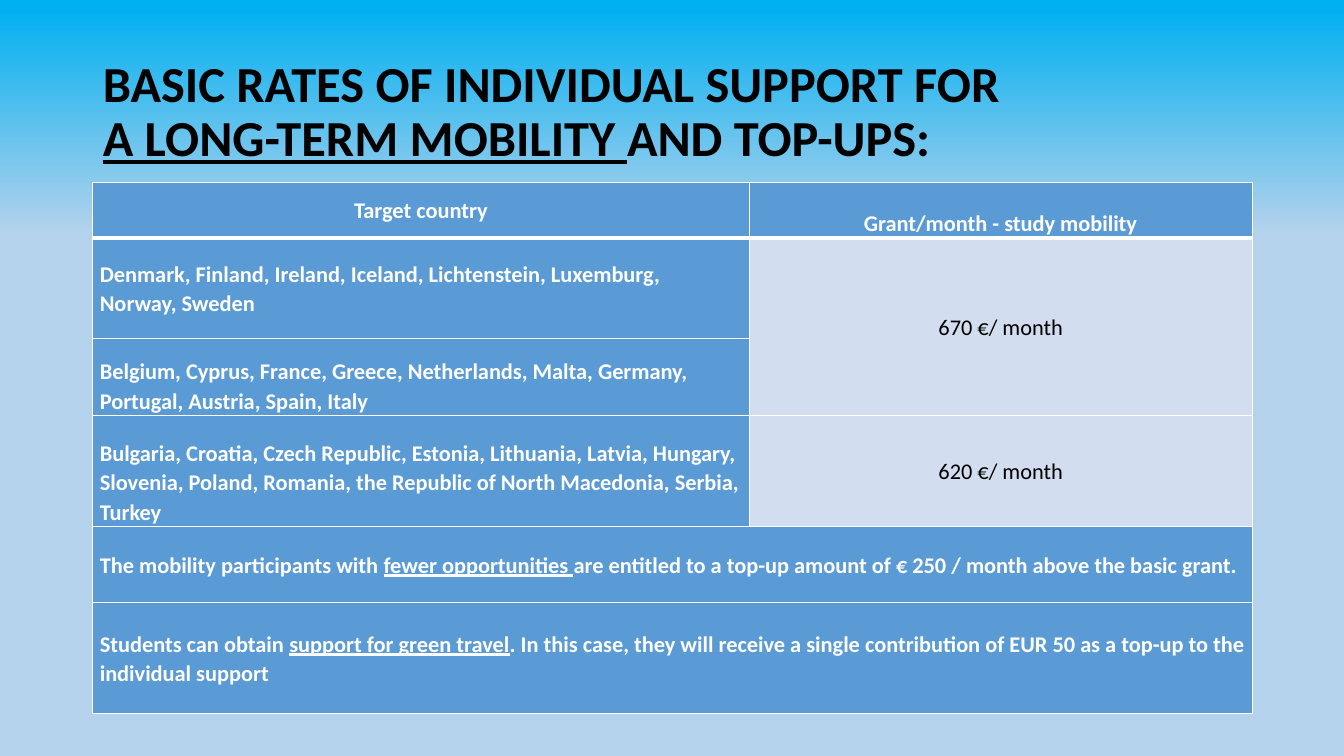
from dataclasses import dataclass

from lxml.etree import SubElement
from pptx import Presentation
from pptx.dml.color import RGBColor
from pptx.enum.text import MSO_ANCHOR, MSO_AUTO_SIZE, PP_ALIGN
from pptx.oxml.ns import qn
from pptx.slide import Slide
from pptx.table import Table, _Cell
from pptx.text.text import _Paragraph
from pptx.util import Inches, Pt

FONT = "Calibri"
SKY = RGBColor(0x00, 0xB0, 0xF0)
PALE_SKY = RGBColor(0xB5, 0xD2, 0xEC)
BLUE = RGBColor(0x5B, 0x9B, 0xD5)
PALE_BLUE = RGBColor(0xD2, 0xDE, 0xEF)
WHITE = RGBColor(0xFF, 0xFF, 0xFF)
BLACK = RGBColor(0x00, 0x00, 0x00)

COLUMN_WIDTHS = (6.51, 4.99)
ROW_HEIGHTS = (0.55, 1, 0.76, 1.1, 0.76, 1.1)


@dataclass(frozen=True)
class Text:
    words: str
    underlined: bool = False


@dataclass(frozen=True)
class Entry:
    row: int
    column: int
    texts: tuple[Text, ...]
    alignment: PP_ALIGN = PP_ALIGN.LEFT
    anchor: MSO_ANCHOR = MSO_ANCHOR.MIDDLE
    is_rate: bool = False
    last_row: int | None = None
    last_column: int | None = None


ENTRIES = (
    Entry(0, 0, (Text("Target country"),), PP_ALIGN.CENTER),
    Entry(0, 1, (Text("Grant/month - study mobility"),), PP_ALIGN.CENTER, MSO_ANCHOR.BOTTOM),
    Entry(1, 0, (Text("Denmark, Finland, Ireland, Iceland, Lichtenstein, Luxemburg, Norway, Sweden"),)),
    Entry(1, 1, (Text("670 €/ month"),), PP_ALIGN.CENTER, is_rate=True, last_row=2),
    Entry(2, 0, (Text("Belgium, Cyprus, France, Greece, Netherlands, Malta, Germany, "
                      "Portugal, Austria, Spain, Italy"),), anchor=MSO_ANCHOR.BOTTOM),
    Entry(3, 0, (Text("Bulgaria, Croatia, Czech Republic, Estonia, Lithuania, Latvia, Hungary, "
                      "Slovenia, Poland, Romania, the Republic of North Macedonia, Serbia, "
                      "Turkey"),), anchor=MSO_ANCHOR.BOTTOM),
    Entry(3, 1, (Text("620 €/ month"),), PP_ALIGN.CENTER, is_rate=True),
    Entry(4, 0, (Text("The mobility participants with "),
                 Text("fewer opportunities ", True),
                 Text("are entitled to a top-up amount of € 250 / month above the basic grant.")),
          PP_ALIGN.JUSTIFY, last_column=1),
    Entry(5, 0, (Text("Students can obtain "),
                 Text("support for green travel", True),
                 Text(". In this case, they will receive a single contribution of EUR 50 "
                      "as a top-up to the individual support")),
          PP_ALIGN.JUSTIFY, last_column=1),
)


def add_texts(paragraph: _Paragraph, texts: tuple[Text, ...]) -> None:
    for text in texts:
        run = paragraph.add_run()
        run.text = text.words
        if text.underlined:
            run.font.underline = True


def format_paragraph(paragraph: _Paragraph, size: int, color: RGBColor, bold: bool,
                     alignment: PP_ALIGN, line_spacing: float) -> None:
    paragraph.alignment = alignment
    paragraph.line_spacing = line_spacing
    paragraph.font.name = FONT
    paragraph.font.size = Pt(size)
    paragraph.font.bold = bold
    paragraph.font.color.rgb = color


def paint_background(slide: Slide) -> None:
    fill = slide.background.fill
    fill.gradient()
    fill.gradient_angle = 270
    for stop, position, color in zip(fill.gradient_stops, (0.01, 0.31), (SKY, PALE_SKY)):
        stop.position = position
        stop.color.rgb = color


def add_title(slide: Slide) -> None:
    title = slide.shapes.title
    title.left, title.top = Inches(0.92), Inches(0.4)
    title.width, title.height = Inches(11.5), Inches(1.45)
    frame = title.text_frame
    frame.auto_size = MSO_AUTO_SIZE.NONE
    frame.vertical_anchor = MSO_ANCHOR.MIDDLE
    paragraph = frame.paragraphs[0]
    add_texts(paragraph, (Text("BASIC RATES OF INDIVIDUAL SUPPORT FOR "),))
    paragraph.add_line_break()
    add_texts(paragraph, (Text("A LONG-TERM MOBILITY ", True), Text("AND TOP-UPS:")))
    format_paragraph(paragraph, 36, BLACK, True, PP_ALIGN.LEFT, 0.9)


def draw_borders(cell: _Cell, widths: dict[str, int]) -> None:
    properties = cell._tc.get_or_add_tcPr()
    for position, (side, width) in enumerate(widths.items()):
        line = SubElement(properties, qn(f"a:{side}"), w=str(Pt(width)))
        color = SubElement(SubElement(line, qn("a:solidFill")), qn("a:srgbClr"))
        color.set("val", str(WHITE))
        properties.insert(position, line)


def fill_entry(table: Table, entry: Entry) -> None:
    cell = table.cell(entry.row, entry.column)
    last_row = entry.row if entry.last_row is None else entry.last_row
    last_column = entry.column if entry.last_column is None else entry.last_column
    if (last_row, last_column) != (entry.row, entry.column):
        cell.merge(table.cell(last_row, last_column))
    for row in range(entry.row, last_row + 1):
        for column in range(entry.column, last_column + 1):
            part = table.cell(row, column)
            part.fill.solid()
            part.fill.fore_color.rgb = PALE_BLUE if entry.is_rate else BLUE
            draw_borders(part, {"lnL": 1, "lnR": 1, "lnT": 3 if row == 1 else 1,
                                "lnB": 3 if row == 0 else 1})
    cell.margin_left = cell.margin_right = Inches(0.07)
    cell.margin_top = cell.margin_bottom = 0
    cell.vertical_anchor = entry.anchor
    paragraph = cell.text_frame.paragraphs[0]
    add_texts(paragraph, entry.texts)
    format_paragraph(paragraph, 16, BLACK if entry.is_rate else WHITE, not entry.is_rate,
                     entry.alignment, 1.07)


def add_rates_table(slide: Slide) -> None:
    table = slide.shapes.add_table(
        len(ROW_HEIGHTS), len(COLUMN_WIDTHS), Inches(0.92), Inches(1.81),
        Inches(sum(COLUMN_WIDTHS)), Inches(sum(ROW_HEIGHTS))).table
    table.first_row = table.horz_banding = False
    for column, width in zip(table.columns, COLUMN_WIDTHS):
        column.width = Inches(width)
    for row, height in zip(table.rows, ROW_HEIGHTS):
        row.height = Inches(height)
    for entry in ENTRIES:
        fill_entry(table, entry)


def main() -> None:
    presentation = Presentation()
    presentation.slide_width, presentation.slide_height = Inches(13.33), Inches(7.5)
    slide = presentation.slides.add_slide(presentation.slide_layouts.get_by_name("Title Only"))
    paint_background(slide)
    add_title(slide)
    add_rates_table(slide)
    presentation.save("out.pptx")


if __name__ == "__main__":
    main()
